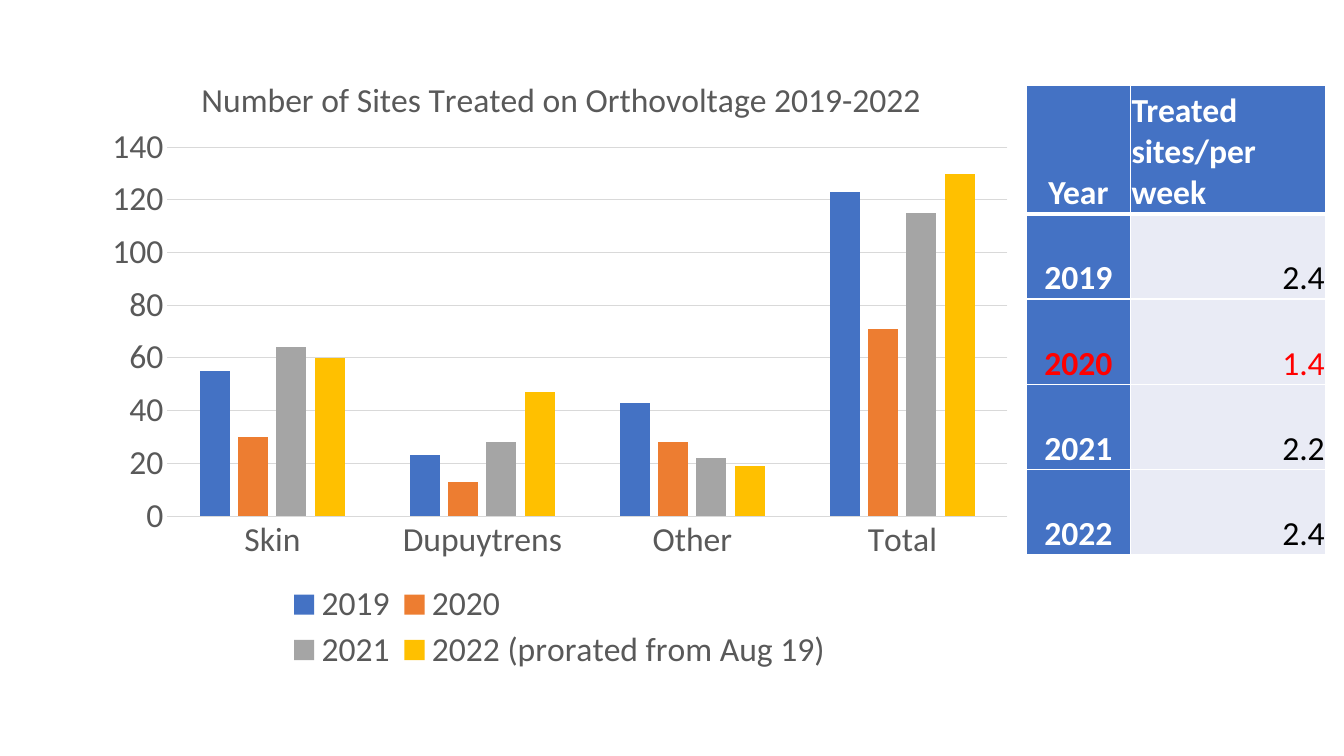
from lxml.etree import SubElement
from pptx import Presentation
from pptx.chart.data import CategoryChartData
from pptx.dml.color import RGBColor
from pptx.enum.chart import XL_CHART_TYPE, XL_LEGEND_POSITION, XL_TICK_MARK
from pptx.enum.text import MSO_ANCHOR, PP_ALIGN
from pptx.oxml import parse_xml
from pptx.oxml.ns import nsdecls, qn
from pptx.util import Pt

BLUE, GREY, RULE, WHITE, PALE = "4472C4", "595959", "D9D9D9", "FFFFFF", "E9EBF5"
BLACK, RED = "000000", "FF0000"
CATEGORIES = ["Skin", "Dupuytrens", "Other", "Total"]
SERIES = [
    ("2019", BLUE, (55, 23, 43, 123)),
    ("2020", "ED7D31", (30, 13, 28, 71)),
    ("2021", "A5A5A5", (64, 28, 22, 115)),
    ("2022 (prorated from Aug 19)", "FFC000", (60, 47, 19, 130)),
]
WEEKLY = [("2019", "2.4"), ("2020", "1.4"), ("2021", "2.2"), ("2022", "2.4")]


def rgb(color):
    return RGBColor.from_string(color)


def style_font(font, color=GREY, size=24, bold=False):
    font.name, font.size, font.bold = "Calibri", Pt(size), bold
    font.color.rgb = rgb(color)


def write(tf, text, align=PP_ALIGN.LEFT, **fmt):
    p = tf.paragraphs[0]
    p.alignment = align
    r = p.add_run()
    r.text = text
    style_font(r.font, **fmt)


def place(element, index, **fractions):
    """Fix a chart part's layout as fractions of the chart's size."""
    for old in element.findall(qn("c:layout")):
        element.remove(old)
    layout = parse_xml(f"<c:layout {nsdecls('c')}><c:manualLayout/></c:layout>")
    manual = layout[0]
    if element.tag == qn("c:plotArea"):
        SubElement(manual, qn("c:layoutTarget")).set("val", "inner")
    for axis in "xy":
        SubElement(manual, qn(f"c:{axis}Mode")).set("val", "edge")
    for name, value in fractions.items():
        SubElement(manual, qn(f"c:{name}")).set("val", str(value))
    element.insert(index, layout)


def add_sites_chart(s, x, y, w, h):
    data = CategoryChartData()
    data.categories = CATEGORIES
    for name, _, values in SERIES:
        data.add_series(name, values)
    chart = s.shapes.add_chart(XL_CHART_TYPE.COLUMN_CLUSTERED,
                               Pt(x), Pt(y), Pt(w), Pt(h), data).chart
    style_font(chart.font)
    write(chart.chart_title.text_frame,
          "Number of Sites Treated on Orthovoltage 2019-2022", PP_ALIGN.CENTER)
    chart.chart_title.include_in_layout = False

    plot = chart.plots[0]
    plot.gap_width, plot.overlap, plot.vary_by_categories = 219, -27, False
    for series, (_, color, _) in zip(plot.series, SERIES):
        series.format.fill.solid()
        series.format.fill.fore_color.rgb = rgb(color)

    cat, val = chart.category_axis, chart.value_axis
    for axis in (cat, val):
        axis.major_tick_mark = axis.minor_tick_mark = XL_TICK_MARK.NONE
        style_font(axis.tick_labels.font)
    val.minimum_scale, val.maximum_scale, val.major_unit = 0, 140, 20
    val.format.line.fill.background()
    for line in (cat.format.line, val.major_gridlines.format.line):
        line.color.rgb = rgb(RULE)
        line.width = Pt(0.75)

    chart.has_legend = True
    chart.legend.position = XL_LEGEND_POSITION.BOTTOM
    chart.legend.include_in_layout = False
    style_font(chart.legend.font)

    root = chart.element
    place(root.find(".//" + qn("c:title")), 1, x=0.11, y=0.04)
    place(root.find(".//" + qn("c:plotArea")), 0, x=0.08, y=0.16, w=0.9, h=0.58)
    place(root.find(".//" + qn("c:legend")), 1, x=0.2, y=0.84, w=0.6, h=0.15)


def set_borders(cell, **widths):
    tcPr = cell._tc.get_or_add_tcPr()
    for i, side in enumerate("LRTB"):
        tcPr.insert(i, parse_xml(
            f'<a:ln{side} {nsdecls("a")} w="{Pt(widths.get(side, 1))}"><a:solidFill>'
            f'<a:srgbClr val="{WHITE}"/></a:solidFill></a:ln{side}>'))


def fill_cell(cell, text, fill, align, **fmt):
    cell.margin_left = cell.margin_right = cell.margin_top = Pt(0.75)
    cell.margin_bottom = 0
    cell.vertical_anchor = MSO_ANCHOR.BOTTOM
    cell.fill.solid()
    cell.fill.fore_color.rgb = rgb(fill)
    write(cell.text_frame, text, align, **fmt)


def add_weekly_table(s, x, y, w, h):
    head_h, year_w = 91.5, 74.5
    table = s.shapes.add_table(len(WEEKLY) + 1, 2, Pt(x), Pt(y), Pt(w), Pt(h)).table
    table.columns[0].width, table.columns[1].width = Pt(year_w), Pt(w - year_w)
    for i, row in enumerate(table.rows):
        row.height = Pt((h - head_h) / len(WEEKLY)) if i else Pt(head_h)

    head = dict(fill=BLUE, color=WHITE, bold=True)
    fill_cell(table.cell(0, 0), "Year", align=PP_ALIGN.CENTER, **head)
    fill_cell(table.cell(0, 1), "Treated sites/per week", align=PP_ALIGN.LEFT, **head)
    for i, (year, rate) in enumerate(WEEKLY, 1):
        low = year == "2020"
        fill_cell(table.cell(i, 0), year, BLUE, PP_ALIGN.CENTER,
                  color=RED if low else WHITE, bold=True)
        fill_cell(table.cell(i, 1), rate, PALE, PP_ALIGN.RIGHT,
                  color=RED if low else BLACK)
    for i in range(len(WEEKLY) + 1):
        for j in range(2):
            set_borders(table.cell(i, j), **{0: {"B": 3}, 1: {"T": 3}}.get(i, {}))


def main():
    prs = Presentation()
    prs.slide_width, prs.slide_height = Pt(960), Pt(540)
    s = prs.slides.add_slide(prs.slide_layouts[6])
    add_weekly_table(s, 733, 61.25, 214, 335)
    add_sites_chart(s, 66.25, 32.5, 666.75, 454.25)
    prs.save("out.pptx")


if __name__ == "__main__":
    main()
